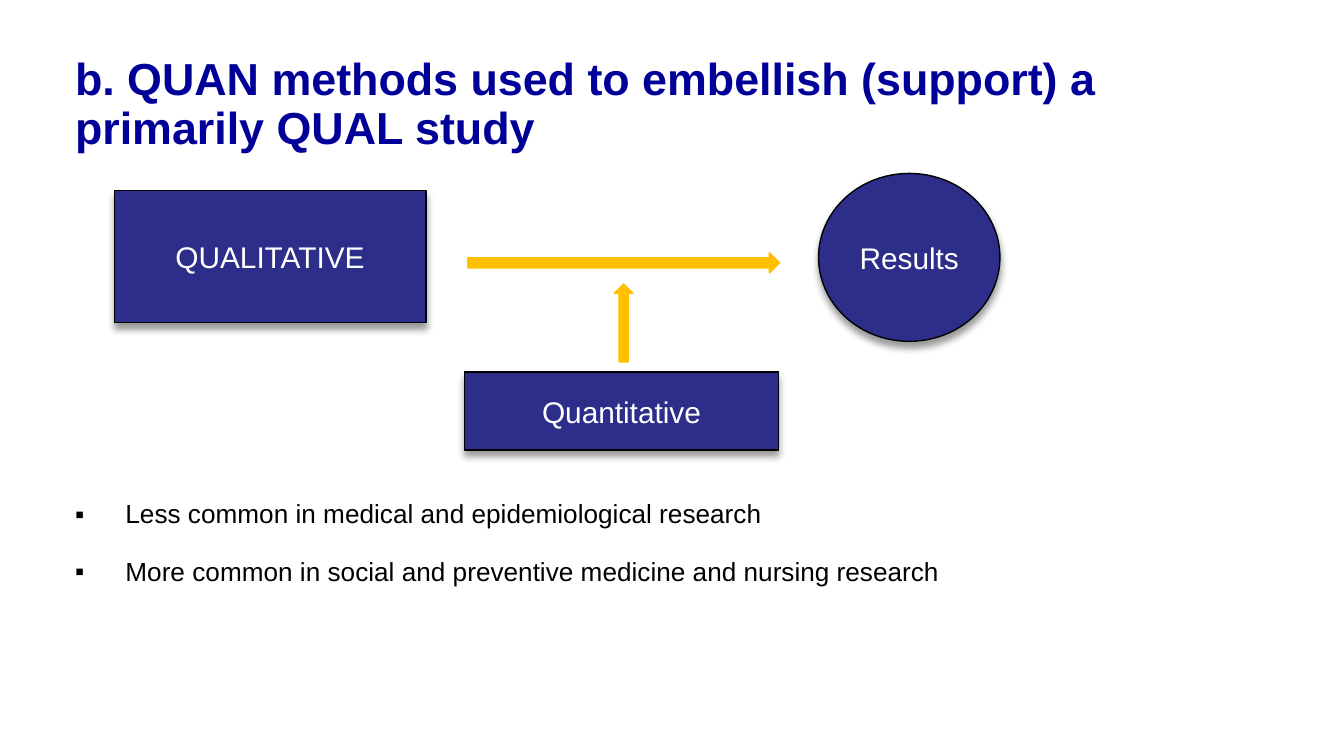
from lxml.etree import SubElement
from pptx import Presentation
from pptx.dml.color import RGBColor
from pptx.enum.shapes import MSO_SHAPE as Shape
from pptx.enum.text import MSO_ANCHOR as Anchor, MSO_AUTO_SIZE as AutoSize, PP_ALIGN as Align
from pptx.oxml.ns import qn
from pptx.util import Pt

# Colours
TITLE_BLUE = RGBColor(0x00, 0x00, 0x99)
BOX_BLUE = RGBColor(0x2D, 0x2D, 0x8A)
ARROW_GOLD = RGBColor(0xFF, 0xC0, 0x00)
BLACK = RGBColor(0x00, 0x00, 0x00)
WHITE = RGBColor(0xFF, 0xFF, 0xFF)

# Content; frames are left, top, width, height in points
SLIDE_SIZE = (720, 405)
TITLE = "b. QUAN methods used to embellish (support) a primarily QUAL study"
TITLE_FRAME = (33, 25, 653, 51)
BULLETS = [
    "Less common in medical and epidemiological research",
    "More common in social and preventive medicine and nursing research",
]
BULLETS_FRAME = (33, 265, 479, 60)
BULLET_INDENT = 27
NODES = [
    ("QUALITATIVE", Shape.RECTANGLE, (61.2, 102.2, 167, 70.6)),
    ("Quantitative", Shape.RECTANGLE, (249, 199.4, 168, 41.8)),
    ("Results", Shape.OVAL, (438.5, 92.9, 97.2, 90)),
]
ARROWS = [  # frame before rotation, rotation in degrees
    ((250.6, 135.4, 167, 10.8), 0),
    ((313.2, 168, 41.8, 10), 270),
]

TITLE_FONT = {"name": "Arial", "size": Pt(24), "bold": True}
BULLET_FONT = {"name": "Arial", "size": Pt(14), "bold": False}
NODE_FONT = {"name": "Arial", "size": Pt(16), "bold": False}


def apply(target, values):
    for name, value in values.items():
        setattr(target, name, value)


def place(shape, frame):
    apply(shape, dict(zip(("left", "top", "width", "height"), map(Pt, frame))))


def write(paragraph, text, font, color):
    paragraph.text = text
    apply(paragraph.font, font)
    paragraph.font.color.rgb = color


def add_shape(kind, frame, fill, line):
    shape = slide.shapes.add_shape(kind, *map(Pt, frame))
    shape.shadow.inherit = False
    shape.fill.solid()
    shape.fill.fore_color.rgb = fill
    shape.line.color.rgb = line
    shape.line.width = Pt(0.75)
    return shape


def add_shadow(shape):
    effects = shape._element.spPr.find(qn("a:effectLst"))
    shadow = SubElement(effects, qn("a:outerShdw"), blurRad=str(Pt(4)),
                        dist=str(Pt(3)), dir="5400000", rotWithShape="0")
    color = SubElement(shadow, qn("a:srgbClr"), val=str(BLACK))
    SubElement(color, qn("a:alpha"), val="40000")


def add_bullet(paragraph):
    properties = paragraph._p.get_or_add_pPr()
    properties.set("marL", str(Pt(BULLET_INDENT)))
    properties.set("indent", str(-Pt(BULLET_INDENT)))
    SubElement(properties, qn("a:buFont"), typeface="Arial")
    SubElement(properties, qn("a:buChar"), char="▪")


presentation = Presentation()
presentation.slide_width, presentation.slide_height = map(Pt, SLIDE_SIZE)
slide = presentation.slides.add_slide(presentation.slide_layouts[1])
title, body = slide.placeholders

# Title and list placeholders
for placeholder, frame in ((title, TITLE_FRAME), (body, BULLETS_FRAME)):
    place(placeholder, frame)
    apply(placeholder.text_frame, {"word_wrap": True, "auto_size": AutoSize.NONE,
                                   "vertical_anchor": Anchor.TOP})

title.text_frame.margin_top = Pt(5.5)
heading = title.text_frame.paragraphs[0]
write(heading, TITLE, TITLE_FONT, TITLE_BLUE)
apply(heading, {"alignment": Align.LEFT, "line_spacing": 0.9})

for index, text in enumerate(BULLETS):
    frame = body.text_frame
    paragraph = frame.add_paragraph() if index else frame.paragraphs[0]
    add_bullet(paragraph)
    write(paragraph, text, BULLET_FONT, BLACK)
    apply(paragraph, {"line_spacing": 0.9, "space_before": Pt(15.5 if index else 0)})

# Study parts
for text, kind, frame in NODES:
    node = add_shape(kind, frame, BOX_BLUE, BLACK)
    add_shadow(node)
    apply(node.text_frame, {"margin_left": 0, "margin_right": 0, "word_wrap": True,
                            "vertical_anchor": Anchor.MIDDLE})
    label = node.text_frame.paragraphs[0]
    write(label, text, NODE_FONT, WHITE)
    label.alignment = Align.CENTER

# Arrows
for frame, rotation in ARROWS:
    arrow = add_shape(Shape.RIGHT_ARROW, frame, ARROW_GOLD, ARROW_GOLD)
    arrow.rotation = rotation

presentation.save("out.pptx")
